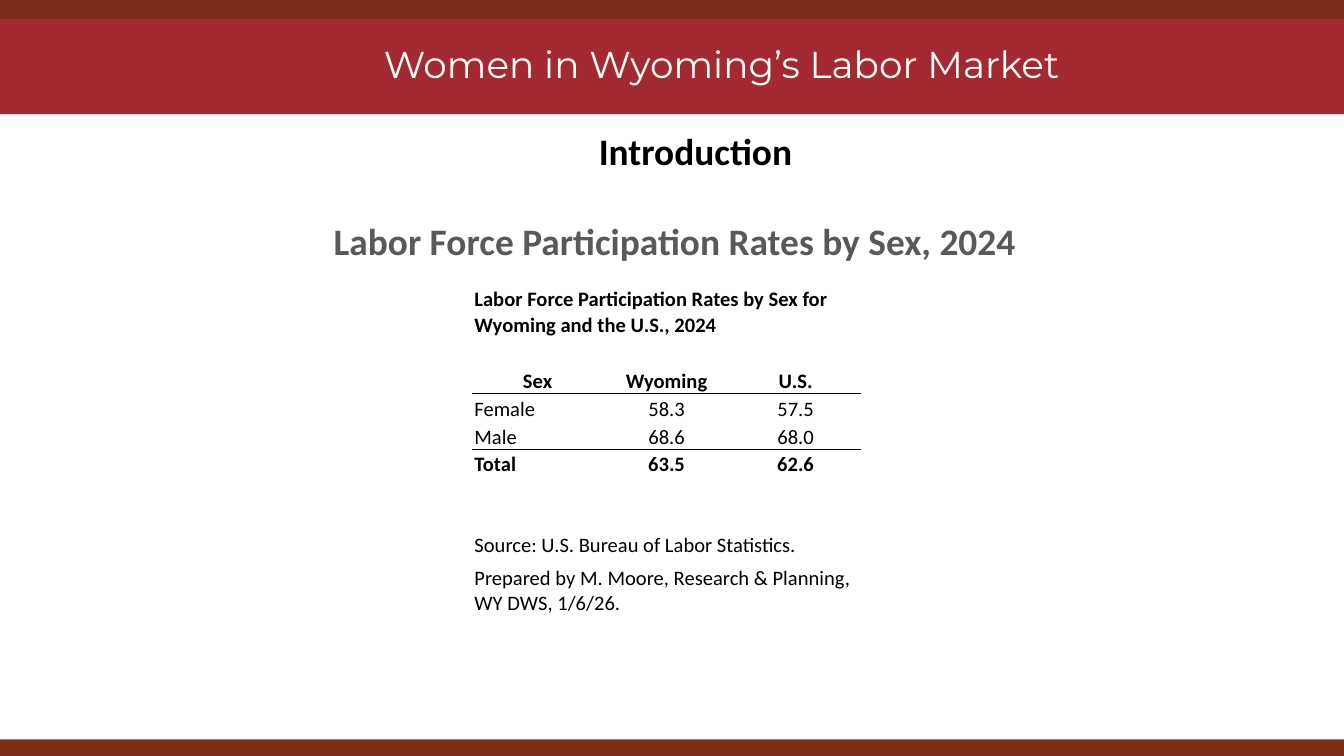
from lxml import etree
from pptx import Presentation
from pptx.dml.color import RGBColor
from pptx.enum.shapes import MSO_SHAPE
from pptx.enum.text import MSO_ANCHOR, PP_ALIGN
from pptx.oxml.ns import qn
from pptx.util import Inches, Pt

RECTANGLE = MSO_SHAPE.RECTANGLE
LEFT, CENTER = PP_ALIGN.LEFT, PP_ALIGN.CENTER
TOP, BOTTOM = MSO_ANCHOR.TOP, MSO_ANCHOR.BOTTOM
RUST = RGBColor(0x7B, 0x2D, 0x19)
CRIMSON = RGBColor(0xA2, 0x2A, 0x30)
WHITE = RGBColor(0xFF, 0xFF, 0xFF)
BLACK = RGBColor(0, 0, 0)
GRAY = RGBColor(0x59, 0x59, 0x59)


def write(paragraph, text, size=20, font="Calibri", color=BLACK, bold=False,
          align=CENTER, indent=0, before=0):
    properties = paragraph._p.get_or_add_pPr()
    properties.set("marL", str(Inches(indent)))
    properties.set("indent", "0")
    paragraph.alignment = align
    paragraph.space_before = Pt(before)
    if not text:
        etree.SubElement(paragraph._p, qn("a:endParaRPr"), sz=str(size * 100))
        return
    run = paragraph.add_run()
    run.text = text
    run.font.size = Pt(size)
    run.font.name = font
    run.font.bold = bold
    run.font.color.rgb = color


def rule(cell, side):
    line = etree.Element(qn(f"a:{side}"), w=str(Pt(0.5)))
    fill = etree.SubElement(line, qn("a:solidFill"))
    etree.SubElement(fill, qn("a:srgbClr"), val=str(BLACK))
    cell._tc.get_or_add_tcPr().insert(0, line)


prs = Presentation()
prs.slide_width = Inches(10)
prs.slide_height = prs.slide_width * 9 // 16
COL, ROW = prs.slide_width / 100, prs.slide_height / 100
slide = prs.slides.add_slide(prs.slide_layouts[6])

for top, height, color in [(0, 15.1, CRIMSON), (0, 2.5, RUST), (97.8, 2.2, RUST)]:
    band = slide.shapes.add_shape(
        RECTANGLE, 0, int(top * ROW), prs.slide_width, int(height * ROW))
    band.shadow.inherit = False
    band.fill.solid()
    band.fill.fore_color.rgb = color
    band.line.fill.background()

frames = []
for left, top, width, height, anchor in [
    (2.75, 15.2, 93.7, 75.9, TOP),
    (16.2, 2.85, 75, 10.3, BOTTOM),
]:
    frame = slide.shapes.add_textbox(
        int(left * COL), int(top * ROW), int(width * COL), int(height * ROW)).text_frame
    frame.word_wrap = True
    frame.vertical_anchor = anchor
    frame.margin_left = frame.margin_right = Inches(0.1)
    frame.margin_top = frame.margin_bottom = Inches(0.1)
    frames.append(frame)
headings, title = frames

write(headings.paragraphs[0], "Introduction", bold=True, indent=0.43)
write(headings.add_paragraph(), "Labor Force Participation Rates by Sex, 2024",
      color=GRAY, bold=True, indent=0.12, before=24)
write(title.paragraphs[0], "Women in Wyoming’s Labor Market",
      font="Montserrat", color=WHITE)

CAPTION, HEADER, FEMALE, MALE, TOTAL = 0, 2, 3, 4, 5
rates = [
    ["Labor Force Participation Rates by Sex for Wyoming and the U.S., 2024", "", ""],
    ["", "", ""],
    ["Sex", "Wyoming", "U.S."],
    ["Female", "58.3", "57.5"],
    ["Male", "68.6", "68.0"],
    ["Total", "63.5", "62.6"],
    ["", "", ""],
    ["Source: U.S. Bureau of Labor Statistics.", "", ""],
    ["Prepared by M. Moore, Research & Planning, WY DWS, 1/6/26.", "", ""],
]
row_shares = [7.4] + [3.7] * 6 + [6.9, 7.8]
table_shape = slide.shapes.add_table(
    len(rates), 3, int(35.2 * COL), int(37.3 * ROW),
    int(28.8 * COL), int(sum(row_shares) * ROW))
table = table_shape.table
table.first_row = table.horz_banding = False
for column in table.columns:
    column.width = int(9.6 * COL)

for r, (texts, share) in enumerate(zip(rates, row_shares)):
    table.rows[r].height = int(share * ROW)
    for c, text in enumerate(texts):
        cell = table.cell(r, c)
        cell.margin_left = cell.margin_right = cell.margin_top = Inches(0.01)
        cell.margin_bottom = 0
        cell.vertical_anchor = BOTTOM
        cell.fill.background()
        write(cell.text_frame.paragraphs[0], text, size=11,
              bold=r in (CAPTION, HEADER, TOTAL),
              align=CENTER if c or r == HEADER else LEFT)
        if r in (HEADER, MALE):
            rule(cell, "lnB")
        if r in (FEMALE, TOTAL):
            rule(cell, "lnT")
    if texts[0] and not texts[1]:
        table.cell(r, 0).merge(table.cell(r, 2))

prs.save("out.pptx")
